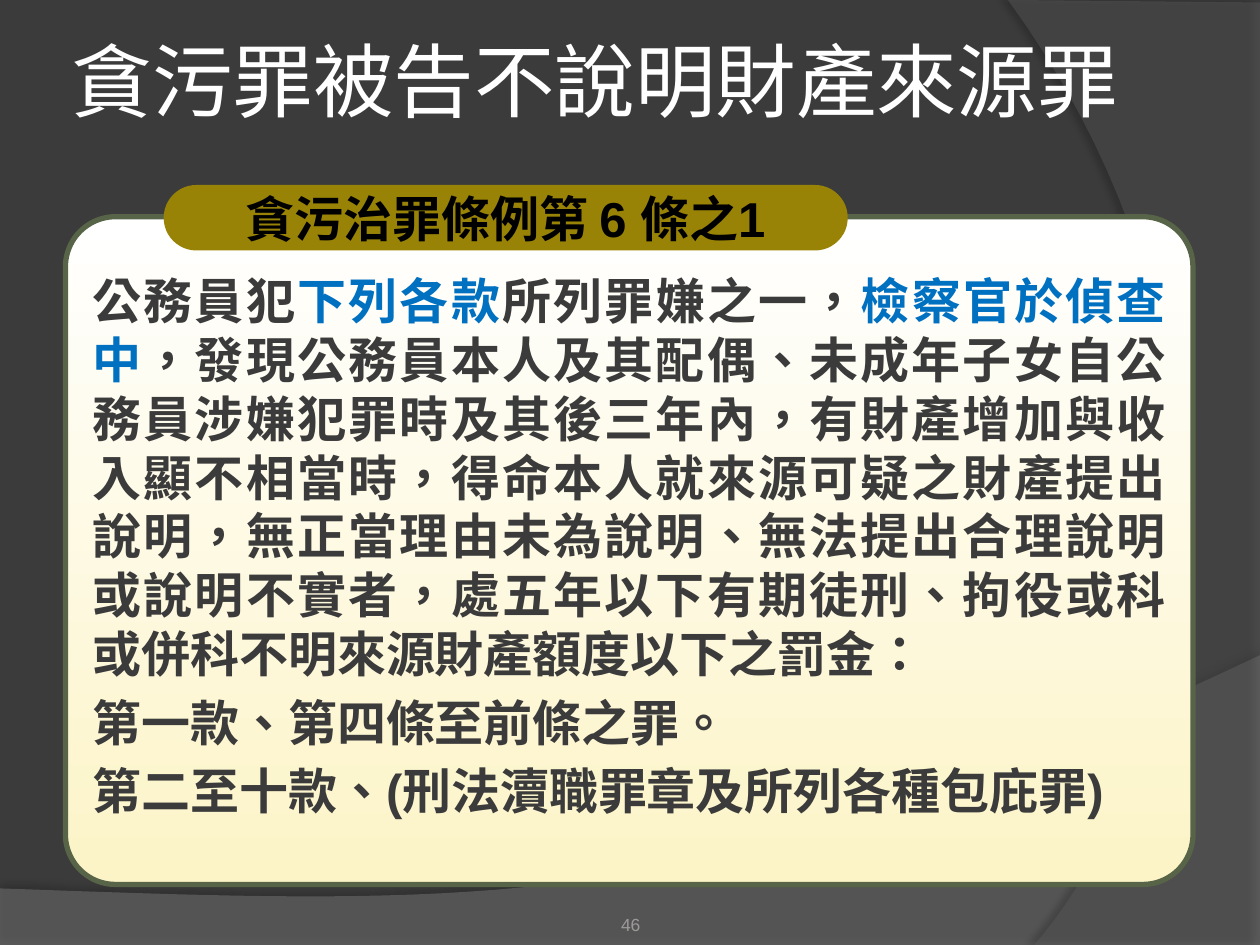
from lxml.etree import SubElement
from pptx import Presentation
from pptx.dml.color import RGBColor
from pptx.enum.shapes import MSO_SHAPE
from pptx.enum.text import MSO_ANCHOR, MSO_AUTO_SIZE, PP_ALIGN
from pptx.oxml.ns import qn
from pptx.util import Cm, Pt

DARK = RGBColor(0x3B, 0x3B, 0x3B)
WHITE = RGBColor(0xFF, 0xFF, 0xFF)
BLACK = RGBColor(0x00, 0x00, 0x00)
BLUE = RGBColor(0x00, 0x70, 0xC0)
GREY = RGBColor(0x9D, 0x9B, 0x9A)
CREAM = RGBColor(0xFC, 0xF4, 0xC7)
GREEN = RGBColor(0x57, 0x64, 0x48)
GOLD = RGBColor(0x99, 0x83, 0x07)
SWEEP_GREY = RGBColor(0x7F, 0x7F, 0x7F)
ARC_GREY = RGBColor(0x5E, 0x5E, 0x5E)

# Content: each paragraph is a list of (text, colour)
TITLE = [[("貪污罪被告不說明財產來源罪", WHITE)]]
HEADING = [[("貪污治罪條例第 6 條之1", BLACK)]]
PAGE_NUMBER = [[("46", GREY)]]
ARTICLE = [
    [
        ("公務員犯", DARK),
        ("下列各款", BLUE),
        ("所列罪嫌之一，", DARK),
        ("檢察官於偵查中", BLUE),
        ("，發現公務員本人及其配偶、未成年子女自公務員涉嫌犯罪時及其後三年內，"
         "有財產增加與收入顯不相當時，得命本人就來源可疑之財產提出說明，"
         "無正當理由未為說明、無法提出合理說明或說明不實者，"
         "處五年以下有期徒刑、拘役或科或併科不明來源財產額度以下之罰金：", DARK),
    ],
    [("第一款、第四條至前條之罪。", DARK)],
    [("第二至十款、(刑法瀆職罪章及所列各種包庇罪)", DARK)],
]

# Background bands in cm: straight corners, then a curve back to the first corner
BANDS = [
    dict(corners=[(0, 17.91), (0, 19.05), (25.4, 19.05), (25.4, 13.21)],
         curve=[(14.2, 18.52), (9.93, 18.26), (0, 17.91)],
         colour=SWEEP_GREY, opacity=45, shadow=(35, 4, 3.5, 270)),
    dict(corners=[(25.4, 0.05), (25.4, 19.05), (20.85, 19.05)],
         curve=[(23.75, 15.72), (25.86, 7.62), (20.32, 0)],
         colour=ARC_GREY, opacity=40, shadow=(45, 4, 4, 180)),
]
CURVE_STEPS = 40


def write_text(box, paragraphs, size, font="Arial", bold=False, align=PP_ALIGN.LEFT,
               anchor=MSO_ANCHOR.TOP, insets=(0.25, 0.13, 0.25, 0.13), wrap=True, gap=0):
    frame = box.text_frame
    frame.auto_size = MSO_AUTO_SIZE.NONE
    frame.word_wrap = wrap
    frame.vertical_anchor = anchor
    (frame.margin_left, frame.margin_top,
     frame.margin_right, frame.margin_bottom) = [Cm(inset) for inset in insets]
    for index, spans in enumerate(paragraphs):
        para = frame.add_paragraph() if index else frame.paragraphs[0]
        para.alignment = align
        para.space_before = Pt(gap if index else 0)
        for text, colour in spans:
            span = para.add_run()
            span.text = text
            span.font.name = font
            span.font.size = Pt(size)
            span.font.bold = bold
            span.font.color.rgb = colour
            span._r.get_or_add_rPr().set("lang", "zh-TW")


def bezier(points):
    """Points along a cubic curve, without its start."""
    weights = (1, 3, 3, 1)
    for step in range(1, CURVE_STEPS + 1):
        t = step / CURVE_STEPS
        yield tuple(
            sum(weight * (1 - t) ** (3 - k) * t ** k * point[axis]
                for k, (weight, point) in enumerate(zip(weights, points)))
            for axis in (0, 1))


def add_band(shapes, corners, curve, colour, opacity, shadow):
    outline = corners + list(bezier([corners[-1]] + curve))
    points = [(Cm(x), Cm(y)) for x, y in outline]
    builder = shapes.build_freeform(*points[0])
    builder.add_line_segments(points[1:], close=True)
    band = builder.convert_to_shape()
    band.fill.solid()
    band.fill.fore_color.rgb = colour
    band.line.fill.background()
    fill_colour = band._element.spPr.find(qn("a:solidFill"))[0]
    SubElement(fill_colour, qn("a:alpha"), val=str(opacity * 1000))
    # Soft edge shadow
    strength, blur, distance, angle = shadow
    effects = SubElement(band._element.spPr, qn("a:effectLst"))
    outer = SubElement(effects, qn("a:outerShdw"), blurRad=str(Pt(blur)),
                       dist=str(Pt(distance)), dir=str(angle * 60000),
                       algn="ctr", rotWithShape="0")
    shade = SubElement(outer, qn("a:srgbClr"), val=str(BLACK))
    SubElement(shade, qn("a:alpha"), val=str(strength * 1000))


def add_rounded(shapes, left, top, width, height, roundness):
    box = shapes.add_shape(MSO_SHAPE.ROUNDED_RECTANGLE,
                           Cm(left), Cm(top), Cm(width), Cm(height))
    box.adjustments[0] = roundness
    box.shadow.inherit = False
    return box


def main():
    deck = Presentation()
    deck.slide_width, deck.slide_height = Cm(25.4), Cm(19.05)
    page = deck.slides.add_slide(deck.slide_layouts[5])
    shapes = page.shapes
    page.background.fill.solid()
    page.background.fill.fore_color.rgb = DARK

    for band in BANDS:
        add_band(shapes, **band)

    # Title, brought in front of the bands
    title = shapes.title
    title.left, title.top, title.width, title.height = Cm(1.32), Cm(0), Cm(22.73), Cm(3.18)
    write_text(title, TITLE, 46, font="Roboto", anchor=MSO_ANCHOR.MIDDLE, insets=(0.13,) * 4)
    shapes._spTree.append(title._element)

    # Page number
    number = shapes.add_textbox(Cm(8.69), Cm(17.83), Cm(8.05), Cm(1.02))
    write_text(number, PAGE_NUMBER, 10, align=PP_ALIGN.CENTER,
               anchor=MSO_ANCHOR.BOTTOM, insets=(0, 0.13, 0, 0))

    # Article panel
    panel = add_rounded(shapes, 1.32, 4.37, 22.73, 13.46, 0.075)
    panel.fill.gradient()
    panel.fill.gradient_angle = 90
    for stop, colour in zip(panel.fill.gradient_stops, (CREAM, WHITE)):
        stop.color.rgb = colour
        stop.position = 0 if colour == CREAM else 1
    panel.line.color.rgb = GREEN
    panel.line.width = Pt(3)
    write_text(panel, ARTICLE, 28, bold=True, align=PP_ALIGN.JUSTIFY,
               insets=(0.25, 0.79, 0.25, 0.13), gap=5.6)

    # Heading pill
    pill = add_rounded(shapes, 3.3, 3.73, 13.79, 1.32, 0.5)
    pill.fill.solid()
    pill.fill.fore_color.rgb = GOLD
    pill.line.fill.background()
    write_text(pill, HEADING, 28, bold=True, align=PP_ALIGN.CENTER,
               anchor=MSO_ANCHOR.MIDDLE, wrap=False)

    deck.save("out.pptx")


if __name__ == "__main__":
    main()
